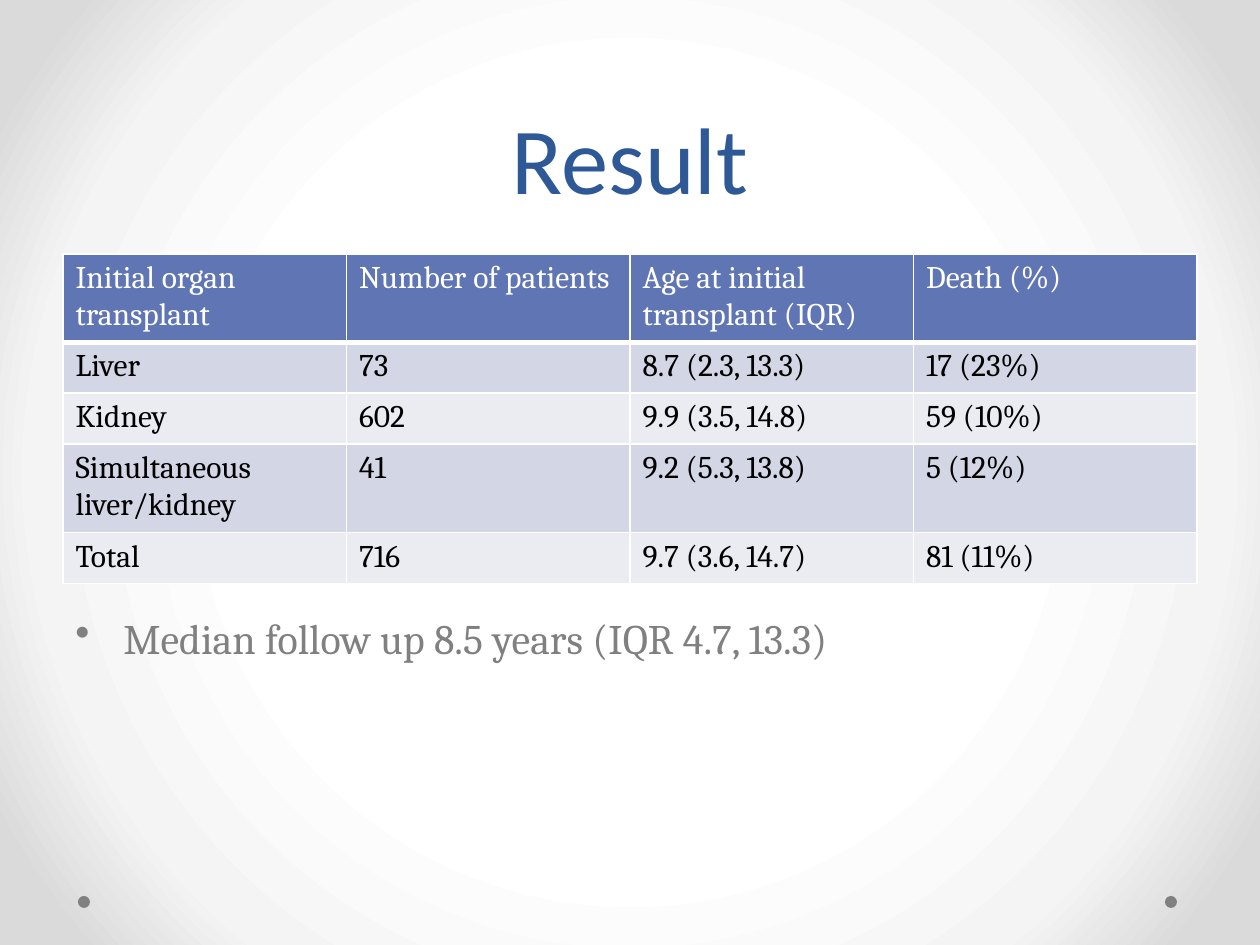
from dataclasses import dataclass

from pptx import Presentation
from pptx.dml.color import RGBColor
from pptx.enum.shapes import MSO_SHAPE
from pptx.enum.text import MSO_ANCHOR, MSO_AUTO_SIZE, PP_ALIGN
from pptx.oxml import parse_xml
from pptx.oxml.ns import nsdecls
from pptx.util import Pt

OVAL = MSO_SHAPE.OVAL
BOTTOM = MSO_ANCHOR.BOTTOM
CENTER = PP_ALIGN.CENTER
NO_FIT = MSO_AUTO_SIZE.NONE
PX = 914400 / 126
TITLE_ONLY = 5


@dataclass(frozen=True)
class Theme:
    head_font: str = "Calibri"
    body_font: str = "Cambria"
    title: str = "2F5897"
    gray: str = "808080"
    white: str = "FFFFFF"
    black: str = "000000"
    header: str = "6076B4"
    bands: tuple = ("D2D6E5", "EAECF2")
    glow: tuple = ((50, "FFFFFF"), (76, "F4F4F4"), (92, "DADADA"))
    title_size: int = 54
    title_line: int = 58
    note_size: int = 24
    cell_size: int = 18


def emu(px):
    return round(px * PX)


class Deck:
    def __init__(self, theme):
        self.theme = theme
        self.prs = Presentation()
        self.prs.slide_width = emu(1260)
        self.prs.slide_height = emu(945)
        self.slide = self.prs.slides.add_slide(self.prs.slide_layouts[TITLE_ONLY])

    def style(self, para, font, size, color):
        para.font.name = font
        para.font.size = Pt(size)
        para.font.color.rgb = RGBColor.from_string(color)

    def glow(self):
        """Fill the background with a round gradient from the centre."""
        fill = self.slide.background.fill
        fill.solid()
        stops = "".join(
            f'<a:gs pos="{pos * 1000}"><a:srgbClr val="{color}"/></a:gs>'
            for pos, color in self.theme.glow)
        grad = parse_xml(
            f'<a:gradFill {nsdecls("a")} rotWithShape="1"><a:gsLst>{stops}</a:gsLst>'
            '<a:path path="circle"><a:fillToRect l="50000" t="50000" r="50000" b="50000"/>'
            '</a:path></a:gradFill>')
        props = self.slide.background._cSld.bg.bgPr
        props.replace(props[0], grad)

    def dot(self, x, y, size):
        dot = self.slide.shapes.add_shape(OVAL, emu(x), emu(y), emu(size), emu(size))
        dot.shadow.inherit = False
        dot.fill.solid()
        dot.fill.fore_color.rgb = RGBColor.from_string(self.theme.gray)
        dot.line.fill.background()

    def title(self, text, x, y, w, h):
        box = self.slide.shapes.title
        box.left, box.top, box.width, box.height = map(emu, (x, y, w, h))
        frame = box.text_frame
        frame.text = text
        frame.auto_size = NO_FIT
        frame.vertical_anchor = BOTTOM
        para = frame.paragraphs[0]
        para.alignment = CENTER
        para.line_spacing = Pt(self.theme.title_line)
        self.style(para, self.theme.head_font, self.theme.title_size, self.theme.title)

    def bullet(self, text, x, y, w, h, indent):
        frame = self.slide.shapes.add_textbox(*map(emu, (x, y, w, h))).text_frame
        frame.word_wrap = True
        para = frame.paragraphs[0]
        para.text = text
        para.space_before = Pt(self.theme.note_size * 0.2)
        self.style(para, self.theme.body_font, self.theme.note_size, self.theme.gray)
        props = para._p.get_or_add_pPr()
        props.set("marL", str(emu(indent)))
        props.set("indent", str(-emu(indent)))
        mark = parse_xml(f'<a:buChar {nsdecls("a")} char="•"/>')
        props.insert_element_before(mark, "a:tabLst", "a:defRPr", "a:extLst")

    def border(self, cell, base):
        """Draw thin white sides, with the given width in points at the base."""
        props = cell._tc.get_or_add_tcPr()
        for spot, (side, width) in enumerate(zip("LRTB", (1, 1, 1, base))):
            props.insert(spot, parse_xml(
                f'<a:ln{side} {nsdecls("a")} w="{Pt(width)}"><a:solidFill>'
                f'<a:srgbClr val="{self.theme.white}"/></a:solidFill></a:ln{side}>'))

    def table(self, rows, x, y, w, heights):
        theme = self.theme
        count = len(rows[0])
        grid = self.slide.shapes.add_table(
            len(rows), count, emu(x), emu(y), emu(w), emu(sum(heights))).table
        for col in grid.columns:
            col.width = emu(w / count)
        for r, (row, height) in enumerate(zip(rows, heights)):
            grid.rows[r].height = emu(height)
            back = theme.bands[(r - 1) % 2] if r else theme.header
            ink = theme.black if r else theme.white
            for c, text in enumerate(row):
                cell = grid.cell(r, c)
                cell.text = text
                cell.fill.solid()
                cell.fill.fore_color.rgb = RGBColor.from_string(back)
                para = cell.text_frame.paragraphs[0]
                self.style(para, theme.body_font, theme.cell_size, ink)
                para.font.bold = False
                self.border(cell, 1 if r else 3)


def main():
    deck = Deck(Theme())
    deck.glow()
    for x in (1165, 78):
        deck.dot(x, 896, 12)
    deck.title("Result", 63, 0, 1134, 220)
    deck.bullet("Median follow up 8.5 years (IQR 4.7, 13.3)", 63, 606, 1134, 299, 48)
    rows = (
        ("Initial organ transplant", "Number of patients",
         "Age at initial transplant (IQR)", "Death (%)"),
        ("Liver", "73", "8.7 (2.3, 13.3)", "17 (23%)"),
        ("Kidney", "602", "9.9 (3.5, 14.8)", "59 (10%)"),
        ("Simultaneous liver/kidney", "41", "9.2 (5.3, 13.8)", "5 (12%)"),
        ("Total", "716", "9.7 (3.6, 14.7)", "81 (11%)"),
    )
    deck.table(rows, 63, 254, 1134, (88, 51, 51, 88, 51))
    deck.prs.save("out.pptx")


if __name__ == "__main__":
    main()
